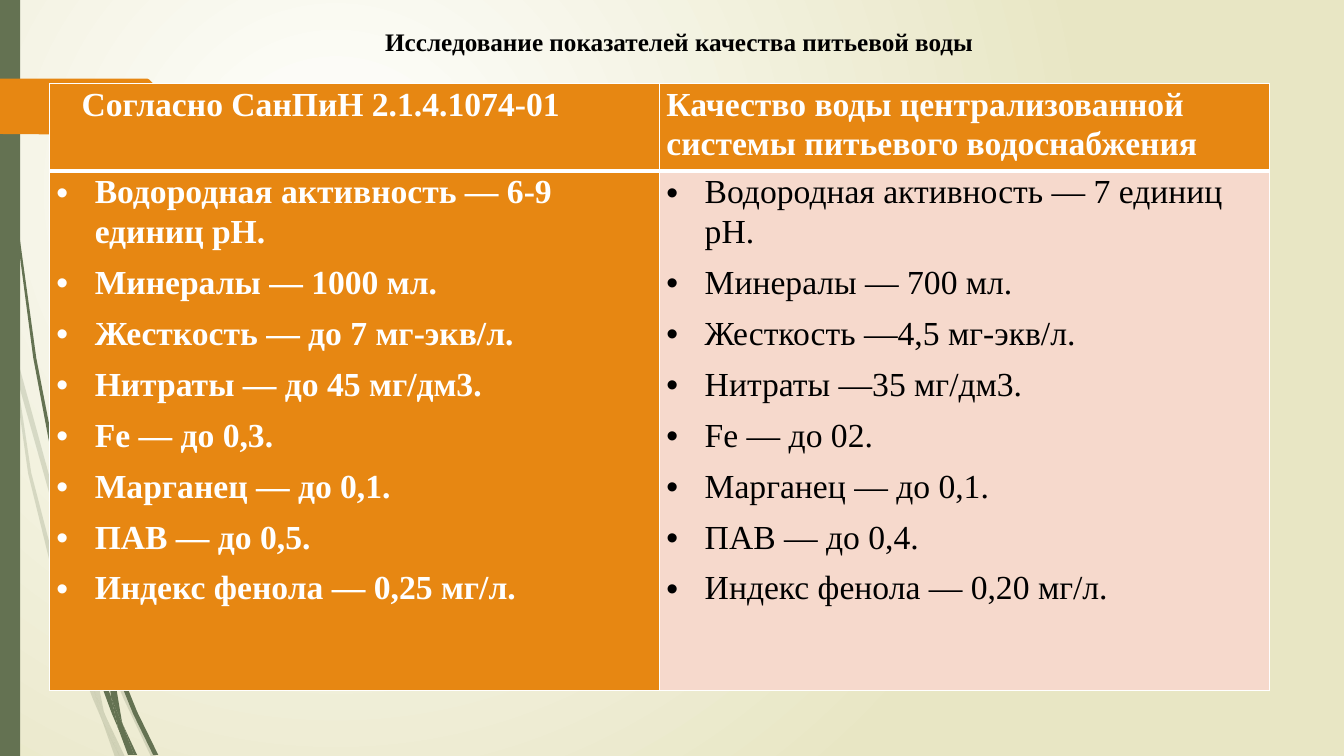
import pptx
import pptx.util
import pptx.oxml
import pptx.oxml.ns
import pptx.dml.color
import pptx.enum.text
import pptx.enum.shapes

WIDE = pptx.util.Inches(13.33)
HIGH = pptx.util.Inches(7.5)
COLS, ROWS = 1333, 750
HUES = {"moss": "647252", "amber": "E78712", "blush": "F6D9CC",
        "sand": "E8E6C4", "white": "FFFFFF", "black": "000000"}
FACE = "Times New Roman"
NS = pptx.oxml.ns.nsdecls("a")

TITLE = "Исследование показателей качества питьевой воды"
HEADS = ["Согласно СанПиН 2.1.4.1074-01",
         "Качество воды централизованной системы питьевого водоснабжения"]
NORMS = ["Водородная активность — 6-9 единиц рН.", "Минералы — 1000 мл.",
         "Жесткость — до 7 мг-экв/л.", "Нитраты — до 45 мг/дм3.",
         "Fe — до 0,3.", "Марганец — до 0,1.", "ПАВ — до 0,5.",
         "Индекс фенола — 0,25 мг/л."]
FINDS = ["Водородная активность — 7 единиц рН.", "Минералы — 700 мл.",
         "Жесткость —4,5 мг-экв/л.", "Нитраты —35 мг/дм3.",
         "Fe — до 02.", "Марганец — до 0,1.", "ПАВ — до 0,4.",
         "Индекс фенола — 0,20 мг/л."]

PALE = [
    [(11, 350), (9, 322), (0, 282), (0, 299), (10, 344)],
    [(58, 522), (84, 599), (85, 586), (62, 520), (14, 345), (17, 376)],
    [(92, 607), (88, 596), (88, 610), (123, 694), (150, 751), (155, 751), (127, 692)],
    [(119, 751), (124, 751), (105, 711)],
    [(93, 683), (70, 619), (31, 469), (17, 376), (11, 350), (28, 470),
     (65, 621), (92, 693), (101, 714), (99, 707)],
    [(84, 599), (87, 646), (93, 683), (96, 692), (105, 711), (103, 706),
     (91, 646), (88, 610), (88, 608)],
    [(88, 584), (110, 462), (160, 349), (229, 245), (268, 198), (290, 175),
     (312, 154), (312, 153), (289, 175), (268, 197), (228, 244), (158, 348),
     (107, 461), (85, 584), (85, 586), (88, 596)],
    [(101, 714), (114, 751), (119, 751)],
    [(88, 608), (88, 610), (88, 596), (85, 586), (84, 599)],
    [(96, 692), (93, 683), (99, 707), (101, 714), (119, 751), (105, 711)],
]
DARK = [
    [(7, 110), (17, 233), (33, 355), (56, 477), (57, 481), (55, 457), (55, 453),
     (36, 355), (19, 232), (8, 109), (5, 48), (4, 0), (3, 0), (4, 48)],
    [(88, 592), (106, 645), (106, 633), (106, 631), (93, 590), (60, 472), (64, 505)],
    [(113, 649), (110, 641), (111, 656), (132, 708), (152, 749), (157, 749), (136, 706)],
    [(110, 691), (98, 657), (72, 556), (64, 505), (57, 477), (68, 557),
     (93, 659), (111, 708), (117, 722), (116, 717)],
    [(60, 472), (58, 453), (54, 349), (58, 245), (63, 193), (70, 141),
     (62, 193), (56, 245), (52, 349), (55, 449)],
    [(133, 749), (136, 749), (122, 719)],
    [(57, 477), (64, 505), (60, 472), (55, 449), (55, 453)],
    [(111, 633), (125, 552), (158, 476), (205, 406), (231, 374), (245, 359),
     (261, 344), (260, 344), (245, 358), (231, 373), (204, 405), (156, 474),
     (122, 551), (106, 631), (110, 641)],
    [(117, 722), (127, 749), (131, 749)],
    [(106, 645), (110, 691), (116, 706), (122, 719), (121, 716), (111, 656), (109, 651)],
    [(106, 645), (109, 651), (111, 656), (110, 641), (106, 631), (106, 633)],
    [(116, 706), (110, 691), (116, 717), (117, 722), (130, 749), (133, 749), (122, 719)],
]
TAG = [(0, 78), (146, 78), (148, 79), (173, 104), (174, 106), (173, 108),
       (148, 133), (146, 134), (0, 133)]


def col(n):
    return round(WIDE * n / COLS)


def row(n):
    return round(HIGH * n / ROWS)


def hue(name):
    return pptx.dml.color.RGBColor.from_string(HUES[name])


def dress(item, style):
    for key, value in style.items():
        setattr(item, key, value)


def paint(shape, name, alpha=None):
    shape.shadow.inherit = False
    shape.line.fill.background()
    shape.fill.solid()
    shape.fill.fore_color.rgb = hue(name)
    if alpha:
        tint = shape.fill._xPr.find(".//" + pptx.oxml.ns.qn("a:srgbClr"))
        tint.append(pptx.oxml.parse_xml(f'<a:alpha {NS} val="{alpha * 1000}"/>'))


def leaf(shapes, dots, name, alpha=None):
    pen = shapes.build_freeform(*dots[0], scale=(WIDE / COLS, HIGH / ROWS))
    pen.add_line_segments(dots[1:], close=True)
    paint(pen.convert_to_shape(), name, alpha)


def grass(slide, leaves, alpha=None):
    group = slide.shapes.add_group_shape()
    for dots in leaves:
        leaf(group.shapes, dots, "moss", alpha)


def backdrop(slide):
    slide.background.fill.solid()
    props = slide.background._cSld.bg.bgPr
    props.replace(props[0], pptx.oxml.parse_xml(
        f'<a:gradFill {NS} rotWithShape="1"><a:gsLst>'
        f'<a:gs pos="0"><a:srgbClr val="{HUES["white"]}"/></a:gs>'
        f'<a:gs pos="100000"><a:srgbClr val="{HUES["sand"]}"/></a:gs></a:gsLst>'
        '<a:path path="circle"><a:fillToRect l="50000" t="50000" '
        'r="100000" b="100000"/></a:path></a:gradFill>'))


def write(para, text, size, name, bold):
    run = para.add_run()
    run.text = text
    dress(run.font, {"name": FACE, "size": pptx.util.Pt(size), "bold": bold})
    run.font.color.rgb = hue(name)


def head(slide):
    title = slide.shapes.title
    dress(title, {"left": col(372), "top": row(21), "width": col(610), "height": row(40)})
    dress(title.text_frame, {"word_wrap": False,
                             "auto_size": pptx.enum.text.MSO_AUTO_SIZE.NONE,
                             "vertical_anchor": pptx.enum.text.MSO_ANCHOR.MIDDLE})
    para = title.text_frame.paragraphs[0]
    para.alignment = pptx.enum.text.PP_ALIGN.LEFT
    write(para, TITLE, 18, "black", True)


def bullet(para):
    props = para._p.get_or_add_pPr()
    props.set("marL", str(col(38)))
    props.set("indent", str(-col(38)))
    for xml in (f'<a:buFont {NS} typeface="Arial"/>',
                f'<a:buChar {NS} char="•"/>',
                f'<a:tabLst {NS}><a:tab pos="{col(35)}" algn="l"/></a:tabLst>'):
        props.append(pptx.oxml.parse_xml(xml))


def frame(cell, widths):
    props = cell._tc.get_or_add_tcPr()
    for spot, (side, points) in enumerate(widths.items()):
        props.insert(spot, pptx.oxml.parse_xml(
            f'<a:ln{side} {NS} w="{pptx.util.Pt(points)}"><a:solidFill>'
            f'<a:srgbClr val="{HUES["white"]}"/></a:solidFill></a:ln{side}>'))


def fill(cell, lines, back, ink, bold, dots):
    dress(cell, {"margin_left": col(7), "margin_right": col(7),
                 "margin_top": 0, "margin_bottom": 0,
                 "vertical_anchor": pptx.enum.text.MSO_ANCHOR.TOP})
    cell.fill.solid()
    cell.fill.fore_color.rgb = hue(back)
    frame(cell, {"L": 1, "R": 1, "T": 3 if dots else 1, "B": 1 if dots else 3})
    for spot, text in enumerate(lines):
        para = cell.text_frame.add_paragraph() if spot else cell.text_frame.paragraphs[0]
        dress(para, {"line_spacing": 1.07, "space_after": pptx.util.Pt(8 if dots else 0)})
        if dots:
            bullet(para)
        write(para, text, 24, ink, bold)


def grid(slide):
    table = slide.shapes.add_table(2, 2, col(49), row(83), col(1210), row(602)).table
    dress(table, {"first_row": False, "horz_banding": False})
    for line, size in zip(table.rows, (87, 515)):
        line.height = row(size)
    for spot, text in enumerate(HEADS):
        fill(table.cell(0, spot), [text], "amber", "white", True, False)
    inset = table.cell(0, 0).text_frame.paragraphs[0]._p.get_or_add_pPr()
    inset.set("marL", str(col(25)))
    fill(table.cell(1, 0), NORMS, "amber", "white", True, True)
    fill(table.cell(1, 1), FINDS, "blush", "black", False, True)


def main():
    deck = pptx.Presentation()
    dress(deck, {"slide_width": WIDE, "slide_height": HIGH})
    slide = deck.slides.add_slide(deck.slide_layouts[5])
    backdrop(slide)
    grass(slide, PALE, 20)
    grass(slide, DARK)
    bar = slide.shapes.add_shape(pptx.enum.shapes.MSO_SHAPE.RECTANGLE, 0, 0, col(20), HIGH)
    paint(bar, "moss")
    leaf(slide.shapes, TAG, "amber")
    head(slide)
    grid(slide)
    deck.save("out.pptx")


if __name__ == "__main__":
    main()
